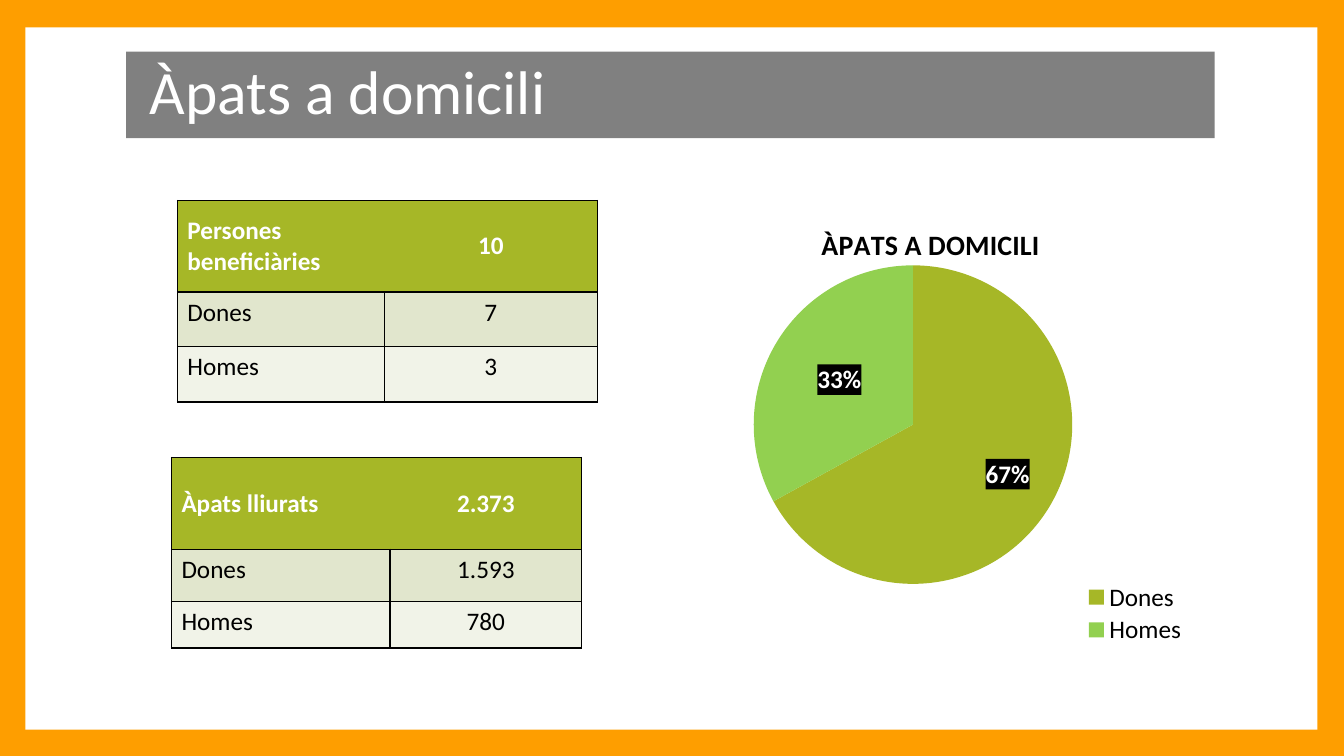
import copy
import dataclasses

import lxml.etree
import pptx
import pptx.chart.data
import pptx.dml.color
import pptx.enum.chart
import pptx.enum.shapes
import pptx.enum.text
import pptx.oxml.ns
import pptx.oxml.xmlchemy
import pptx.util

Cm, Pt = pptx.util.Cm, pptx.util.Pt
qn = pptx.oxml.ns.qn
new_element = pptx.oxml.xmlchemy.OxmlElement
ALIGN = pptx.enum.text.PP_ALIGN
ANCHOR = pptx.enum.text.MSO_ANCHOR


@dataclasses.dataclass(frozen=True)
class Theme:
    font: str = "Calibri"
    border: str = "FE9E00"
    white: str = "FFFFFF"
    black: str = "000000"
    banner: str = "808080"
    olive: str = "A6B727"
    green: str = "92D050"
    bands: tuple = ("E1E6CD", "F1F3E8")
    title: int = 44
    chart_title: int = 20
    body: int = 18


THEME = Theme()


def paint(fill, color):
    fill.solid()
    fill.fore_color.rgb = pptx.dml.color.RGBColor.from_string(color)


def style_font(font, size, color, bold=False):
    font.name, font.size, font.bold = THEME.font, Pt(size), bold
    font.color.rgb = pptx.dml.color.RGBColor.from_string(color)


def write(para, text, size, color, bold=False):
    span = para.add_run()
    span.text = text
    style_font(span.font, size, color, bold)


def add_frame(page, left, top, width, height):
    """Fill the page with the border colour and lay the white sheet on it."""
    paint(page.background.fill, THEME.border)
    sheet = page.shapes.add_shape(
        pptx.enum.shapes.MSO_SHAPE.RECTANGLE, Cm(left), Cm(top), Cm(width), Cm(height))
    sheet.shadow.inherit = False
    paint(sheet.fill, THEME.white)
    sheet.line.fill.background()
    sheet.element.addnext(page.shapes.title.element)


def add_banner(page, text, left, top, width, height):
    title = page.shapes.title
    title.left, title.top, title.width, title.height = map(Cm, (left, top, width, height))
    paint(title.fill, THEME.banner)
    frame = title.text_frame
    frame.word_wrap = True
    frame.auto_size = pptx.enum.text.MSO_AUTO_SIZE.NONE
    frame.vertical_anchor = ANCHOR.MIDDLE
    frame.margin_left = Cm(0.6)
    para = frame.paragraphs[0]
    para.alignment, para.line_spacing = ALIGN.LEFT, 0.9
    write(para, text, THEME.title, THEME.white)


def set_borders(cell, hidden):
    """Rule the cell in black, leaving out the hidden sides."""
    props = cell._tc.get_or_add_tcPr()
    for side in "LRTB":
        line = lxml.etree.SubElement(props, qn(f"a:ln{side}"), w=str(Pt(1)))
        if side in hidden:
            lxml.etree.SubElement(line, qn("a:noFill"))
        else:
            solid = lxml.etree.SubElement(line, qn("a:solidFill"))
            lxml.etree.SubElement(solid, qn("a:srgbClr"), val=THEME.black)


def add_count_table(page, rows, left, top, widths, heights):
    table = page.shapes.add_table(
        len(rows), len(widths), Cm(left), Cm(top), Cm(sum(widths)), Cm(sum(heights))).table
    for column, width in zip(table.columns, widths):
        column.width = Cm(width)
    for r, (texts, height) in enumerate(zip(rows, heights)):
        table.rows[r].height = Cm(height)
        header = r == 0
        for c, text in enumerate(texts):
            cell = table.cell(r, c)
            set_borders(cell, "RL"[c] if header else "")
            paint(cell.fill, THEME.olive if header else THEME.bands[r - 1])
            cell.vertical_anchor = ANCHOR.MIDDLE if header else ANCHOR.TOP
            para = cell.text_frame.paragraphs[0]
            para.alignment = ALIGN.CENTER if c else ALIGN.LEFT
            write(para, text, THEME.body, THEME.white if header else THEME.black, header)


def make_layout(**values):
    layout = new_element("c:layout")
    manual = lxml.etree.SubElement(layout, qn("c:manualLayout"))
    for tag, value in values.items():
        lxml.etree.SubElement(manual, qn(f"c:{tag}"), val=str(value))
    return layout


def place_part(chart, tag, index, **values):
    """Give a chart part a manual layout as its child at the index."""
    part = chart.element.find(".//" + qn(tag))
    for old in part.findall(qn("c:layout")):
        part.remove(old)
    part.insert(index, make_layout(**values))


def add_percent_labels(series, shifts):
    """Label slices with percentages on black, each moved by its (x, y) share."""
    labels = series.data_labels
    labels.show_value, labels.show_percentage = False, True
    labels.number_format, labels.number_format_is_linked = "0%", False
    labels.position = pptx.enum.chart.XL_LABEL_POSITION.CENTER
    style_font(labels.font, THEME.body, THEME.white, True)
    root = labels._element
    box = new_element("c:spPr")
    solid = lxml.etree.SubElement(box, qn("a:solidFill"))
    lxml.etree.SubElement(solid, qn("a:srgbClr"), val=THEME.black)
    root.find(qn("c:txPr")).addprevious(box)
    shared = [part for part in root if part.tag != qn("c:showLeaderLines")]
    for number, (x, y) in enumerate(shifts):
        label = new_element("c:dLbl")
        lxml.etree.SubElement(label, qn("c:idx"), val=str(number))
        label.append(make_layout(x=x, y=y))
        label.extend(copy.deepcopy(shared))
        root.insert(number, label)


def add_share_pie(page, name, shares, left, top, width, height):
    data = pptx.chart.data.CategoryChartData()
    data.categories = list(shares)
    data.add_series(name, list(shares.values()))
    chart = page.shapes.add_chart(
        pptx.enum.chart.XL_CHART_TYPE.PIE,
        Cm(left), Cm(top), Cm(width), Cm(height), data).chart
    style_font(chart.font, THEME.body, THEME.black)
    chart.has_title = True
    write(chart.chart_title.text_frame.paragraphs[0], name,
          THEME.chart_title, THEME.black, True)
    chart.has_legend = True
    chart.legend.position = pptx.enum.chart.XL_LEGEND_POSITION.RIGHT
    chart.legend.include_in_layout = False

    plot = chart.plots[0]
    plot.vary_by_categories = True
    series = plot.series[0]
    for number, color in enumerate((THEME.olive, THEME.green)):
        paint(series.points[number].format.fill, color)
    add_percent_labels(series, [(0.05, 0.02), (-0.01, -0.01)])

    edges = {"xMode": "edge", "yMode": "edge"}
    place_part(chart, "c:title", 1, **edges, x=0.28, y=0.05)
    place_part(chart, "c:legend", 1, **edges, x=0.79, y=0.85, w=0.2, h=0.15)
    place_part(chart, "c:plotArea", 0, layoutTarget="inner", **edges,
               x=0.16, y=0.15, w=0.61, h=0.71)


def add_meals_slide(deck):
    page = deck.slides.add_slide(deck.slide_layouts[5])
    add_frame(page, 0.64, 0.69, 32.56, 17.7)
    add_banner(page, "Àpats a domicili", 3.18, 1.3, 27.43, 2.18)
    add_count_table(
        page, [("Persones beneficiàries", "10"), ("Dones", "7"), ("Homes", "3")],
        4.47, 5.05, (5.21, 5.38), (2.31, 1.37, 1.4))
    add_count_table(
        page, [("Àpats lliurats", "2.373"), ("Dones", "1.593"), ("Homes", "780")],
        4.32, 11.53, (5.51, 4.83), (2.31, 1.32, 1.17))
    add_share_pie(page, "ÀPATS A DOMICILI", {"Dones": 67, "Homes": 33},
                  16.89, 4.98, 13.16, 11.33)


def main():
    deck = pptx.Presentation()
    deck.slide_width, deck.slide_height = Cm(33.87), Cm(19.05)
    add_meals_slide(deck)
    deck.save("out.pptx")


if __name__ == "__main__":
    main()
